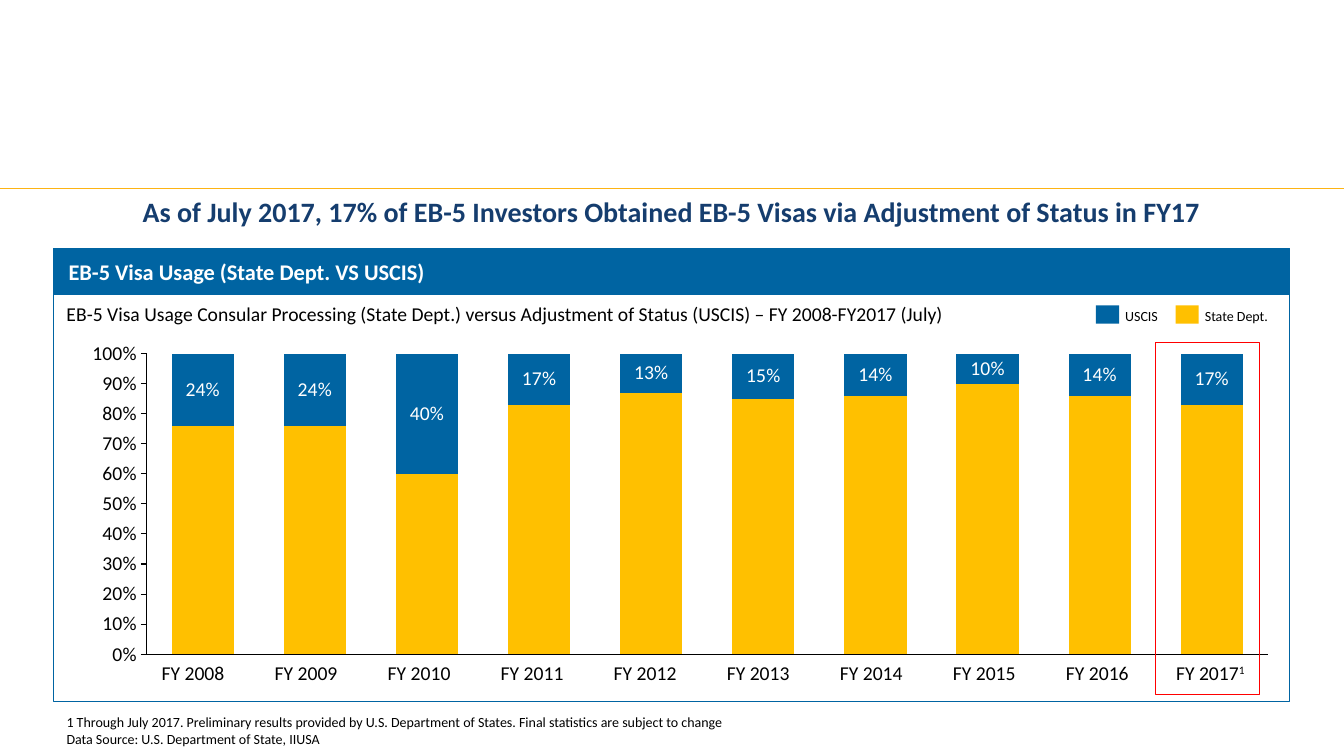
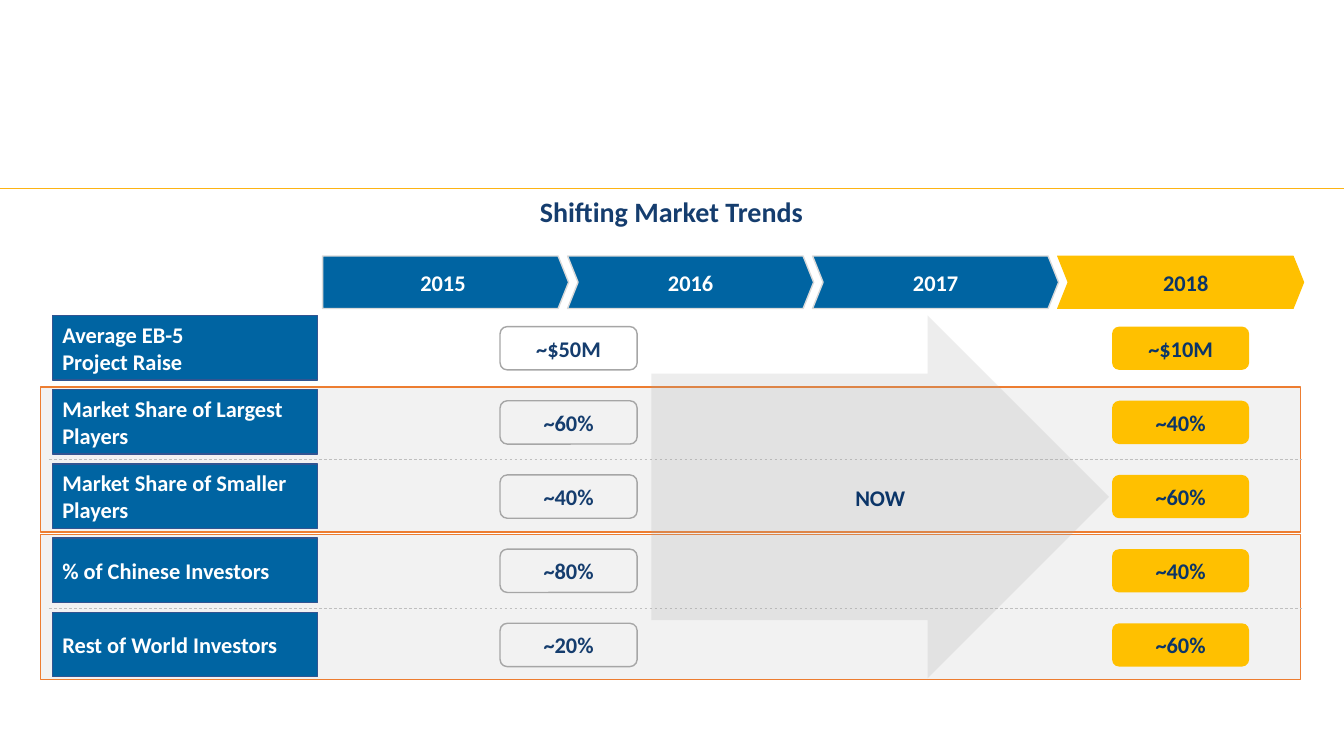
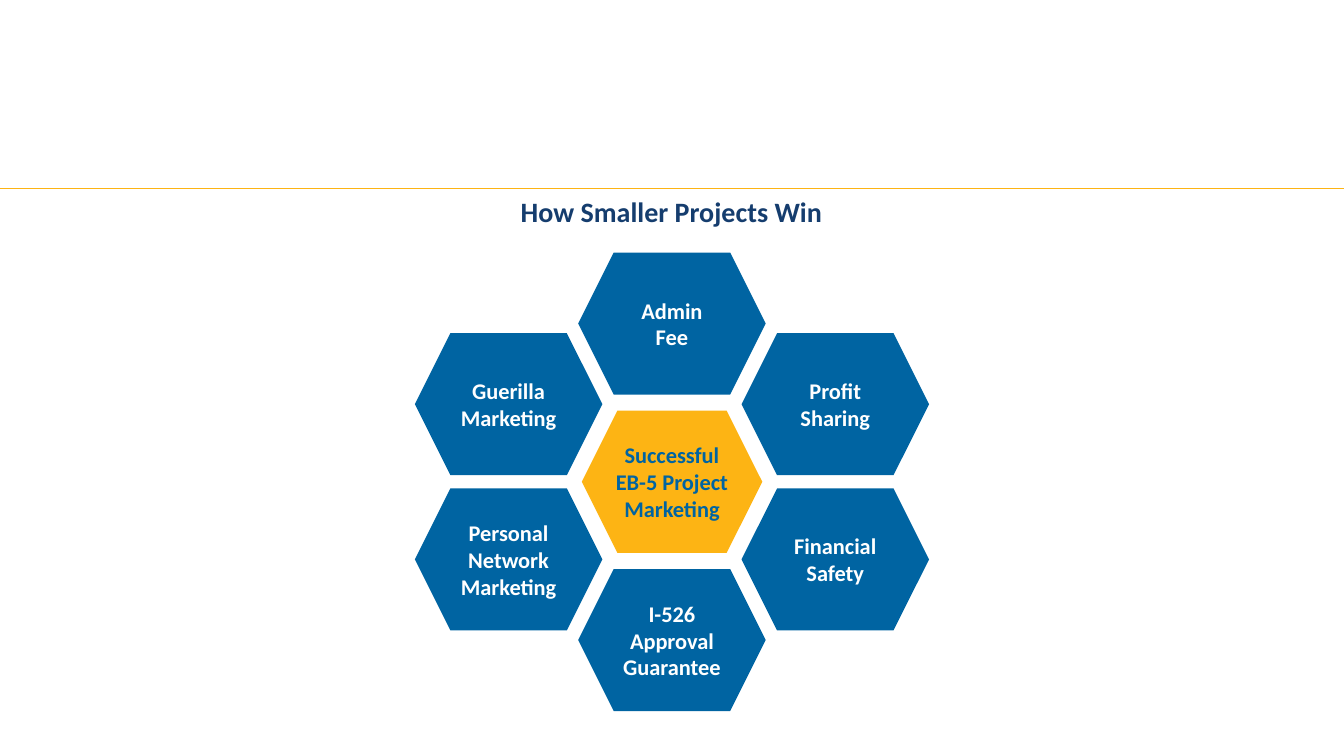
from typing import NamedTuple

from lxml.etree import SubElement as Sub
from pptx import Presentation
from pptx.chart.data import CategoryChartData as Data
from pptx.dml.color import RGBColor as RGB
from pptx.enum.chart import XL_CHART_TYPE as Kind
from pptx.enum.chart import XL_LABEL_POSITION as Spot
from pptx.enum.chart import XL_TICK_LABEL_POSITION as Tag
from pptx.enum.chart import XL_TICK_MARK as Tick
from pptx.enum.dml import MSO_LINE as Dash
from pptx.enum.shapes import MSO_CONNECTOR as Link
from pptx.enum.shapes import MSO_SHAPE as Form
from pptx.enum.text import MSO_ANCHOR as Anchor
from pptx.enum.text import PP_ALIGN as Align
from pptx.oxml import parse_xml
from pptx.oxml.ns import nsdecls, qn
from pptx.util import Inches, Pt

WIDE, HIGH = 13.33, 7.5
FONT = "Calibri"
BLUE = RGB(0x00, 0x64, 0xA2)
NAVY = RGB(0x15, 0x3D, 0x6E)
INK = RGB(0x0B, 0x35, 0x68)
EDGE = RGB(0x32, 0x54, 0x91)
GOLD = RGB(0xFF, 0xC0, 0x00)
AMBER = RGB(0xFD, 0xB4, 0x14)
ORANGE = RGB(0xED, 0x7D, 0x31)
RED = RGB(0xFF, 0x00, 0x00)
WHITE = RGB(0xFF, 0xFF, 0xFF)
BLACK = RGB(0x00, 0x00, 0x00)
PALE = RGB(0xF2, 0xF2, 0xF2)
LIGHT = RGB(0xD9, 0xD9, 0xD9)
SILVER = RGB(0xBF, 0xBF, 0xBF)
GREY = RGB(0xA6, 0xA6, 0xA6)
SHADE = RGB(0xA5, 0xA5, 0xA5)


class Box(NamedTuple):
    x: float
    y: float
    w: float
    h: float

    def cell(self, dx, dy, w, h):
        """Box of size w by h, offset from this box's corner."""
        return Box(self.x + dx, self.y + dy, w, h)

    def row(self, i, step, h):
        return self.cell(0, i * step, self.w, h)

    def emu(self):
        return [Inches(v) for v in self]


def style(font, size, color, bold=False):
    font.name, font.size, font.bold = FONT, Pt(size), bold
    font.color.rgb = color


def write(shape, text, size, color, bold=False, align=Align.LEFT,
          anchor=Anchor.MIDDLE, pad=(0, 0, 0, 0), wrap=True):
    frame = shape.text_frame
    frame.text = text
    frame.word_wrap, frame.vertical_anchor = wrap, anchor
    (frame.margin_left, frame.margin_top,
     frame.margin_right, frame.margin_bottom) = [Inches(v) for v in pad]
    for para in frame.paragraphs:
        para.alignment = align
        for run in para.runs:
            style(run.font, size, color, bold)
    return frame


def label(slide, box, text, size, color=BLACK, **look):
    return write(slide.shapes.add_textbox(*box.emu()), text, size, color, **look)


def draw(slide, form, box, fill=None, line=None, width=1.0, adj=()):
    shape = slide.shapes.add_shape(form, *box.emu())
    shape.shadow.inherit = False
    if fill is None:
        shape.fill.background()
    else:
        shape.fill.solid()
        shape.fill.fore_color.rgb = fill
    if line is None:
        shape.line.fill.background()
    else:
        shape.line.color.rgb, shape.line.width = line, Pt(width)
    for i, value in enumerate(adj):
        shape.adjustments[i] = value
    return shape


def rule(slide, left, right, y, color, dash=None):
    ends = [Inches(v) for v in (left, y, right, y)]
    line = slide.shapes.add_connector(Link.STRAIGHT, *ends)
    line.line.color.rgb, line.line.width = color, Pt(0.5)
    if dash:
        line.line.dash_style = dash
    Sub(line._element.spPr, qn("a:effectLst"))


def start(deck, title):
    """Add a slide with the shared title and gold rule."""
    slide = deck.slides.add_slide(deck.slide_layouts[6])
    frame = label(slide, Box(0.53, 1.97, 12.26, 0.3), title, 20, NAVY,
                  bold=True, align=Align.CENTER, anchor=Anchor.TOP)
    frame.paragraphs[0].line_spacing = 0.9
    rule(slide, 0, WIDE, 1.87, AMBER)
    return slide


# Visa usage

YEARS = [f"FY {year}" for year in range(2008, 2018)]
USCIS = [24, 24, 40, 17, 13, 15, 14, 10, 14, 17]


def plot(slide, box):
    data = Data()
    data.categories = YEARS
    data.add_series("State Dept.", [100 - v for v in USCIS])
    data.add_series("USCIS", USCIS)
    chart = slide.shapes.add_chart(Kind.COLUMN_STACKED, *box.emu(), data).chart
    chart.has_legend = chart.has_title = False
    style(chart.font, 10, BLACK)

    bars = chart.plots[0]
    bars.gap_width, bars.overlap, bars.vary_by_categories = 80, 100, False
    for series, color in zip(bars.series, (GOLD, BLUE)):
        series.format.fill.solid()
        series.format.fill.fore_color.rgb = color
    tags = bars.series[1].data_labels
    tags.show_value, tags.position = True, Spot.CENTER
    tags.number_format, tags.number_format_is_linked = '#,##0"%"', False
    style(tags.font, 14, WHITE)

    cats, vals = chart.category_axis, chart.value_axis
    for axis in (cats, vals):
        axis.has_major_gridlines = False
        axis.major_tick_mark = axis.minor_tick_mark = Tick.NONE
        axis.format.line.color.rgb, axis.format.line.width = BLACK, Pt(0.75)
    cats.tick_label_position = Tag.NONE
    vals.major_tick_mark = Tick.OUTSIDE
    vals.minimum_scale, vals.maximum_scale, vals.major_unit = 0, 100, 10
    vals.tick_labels.number_format = '#,##0"%";"-"#,##0"%"'
    vals.tick_labels.number_format_is_linked = False
    style(vals.tick_labels.font, 14, BLACK)

    area = chart._chartSpace.chart.plotArea
    for old in area.findall(qn("c:layout")):
        area.remove(old)
    places = zip("xywh", (0.064, 0.048, 0.929, 0.904))
    area.insert(0, parse_xml(
        f'<c:layout {nsdecls("c")}><c:manualLayout><c:layoutTarget val="inner"/>'
        '<c:xMode val="edge"/><c:yMode val="edge"/>'
        + "".join(f'<c:{k} val="{v}"/>' for k, v in places)
        + "</c:manualLayout></c:layout>"))


def ticks(slide, box):
    """Year labels, evenly spread from the first to the last column."""
    wide = 0.73
    step = (box.w - wide) / (len(YEARS) - 1)
    for i, year in enumerate(YEARS):
        frame = label(slide, box.cell(i * step, 0, wide, box.h), year, 14,
                      align=Align.CENTER, anchor=Anchor.TOP, wrap=False)
    note = frame.paragraphs[0].add_run()
    note.text = "1"
    style(note.font, 14, BLACK)
    note.font._element.set("baseline", "30000")


def legend(slide, box):
    for i, (name, color) in enumerate((("USCIS", BLUE), ("State Dept.", GOLD))):
        key = box.cell(i * 0.79, 0, 0.23, 0.18)
        draw(slide, Form.RECTANGLE, key, color)
        label(slide, key.cell(0.29, 0, 0.75, 0.2), name, 10, wrap=False)


def usage(slide, box):
    draw(slide, Form.RECTANGLE, box, WHITE, BLUE, 0.75)
    draw(slide, Form.RECTANGLE, box.row(0, 0, 0.45), BLUE, BLUE, 0.75)
    label(slide, box.cell(0.15, 0.09, 11.98, 0.27),
          "EB-5 Visa Usage (State Dept. VS USCIS)", 16, WHITE, bold=True)
    label(slide, box.cell(0.13, 0.53, 9.86, 0.24),
          "EB-5 Visa Usage Consular Processing (State Dept.) versus Adjustment "
          "of Status (USCIS) – FY 2008-FY2017 (July)", 14, anchor=Anchor.TOP)
    legend(slide, box.cell(10.34, 0.56, 1.83, 0.2))
    plot(slide, box.cell(0.16, 0.88, 11.97, 3.3))
    ticks(slide, box.cell(1.02, 4.09, 10.82, 0.27))
    draw(slide, Form.RECTANGLE, box.cell(10.93, 0.93, 1.03, 3.49), None, RED)
    label(slide, box.cell(0.13, 4.6, 12.02, 0.34),
          "1 Through July 2017. Preliminary results provided by U.S. Department "
          "of States. Final statistics are subject to change\n"
          "Data Source: U.S. Department of State, IIUSA", 10, anchor=Anchor.BOTTOM)


# Market trends

TRENDS = [
    ("Average EB-5\nProject Raise", "~$50M", "~$10M"),
    ("Market Share of Largest Players", "~60%", "~40%"),
    ("Market Share of Smaller Players", "~40%", "~60%"),
    ("% of Chinese Investors", "~80%", "~40%"),
    ("Rest of World Investors", "~20%", "~60%"),
]


def groups(slide, box):
    """Two framed bands, each for a pair of rows."""
    for i in range(2):
        draw(slide, Form.RECTANGLE, box.row(i, 1.46, 1.44), PALE, ORANGE)


def years(slide, box):
    step = box.w / 4
    for i in range(4):
        last = i == 3
        shape = draw(slide, Form.CHEVRON if i else Form.PENTAGON,
                     box.cell(i * step, 0, step + 0.01, box.h),
                     GOLD if last else BLUE, GOLD if last else LIGHT,
                     0.75 if last else 1, adj=[0.2])
        write(shape, str(2015 + i), 16, INK if last else WHITE, bold=True,
              align=Align.CENTER, pad=(0.2 if last else 0.1, 0.05, 0.1, 0.05))


def rows(slide, box):
    pitch = box.h / len(TRENDS)
    for i, (name, then, now) in enumerate(TRENDS):
        line = box.row(i, pitch, 0.64)
        head = draw(slide, Form.RECTANGLE, line.cell(0, 0, 2.63, line.h), BLUE, EDGE)
        write(head, name, 16, WHITE, bold=True, pad=(0.1, 0.05, 0.1, 0.05))
        chips = ((then, 4.44, None, GREY, NAVY), (now, 10.51, GOLD, None, INK))
        for text, dx, fill, edge, color in chips:
            chip = draw(slide, Form.ROUNDED_RECTANGLE,
                        line.cell(dx, 0.11, 1.36, 0.43), fill, edge)
            write(chip, text, 16, color, bold=True, align=Align.CENTER)
    for i in (2, 4):
        rule(slide, box.x - 0.03, box.x + box.w, box.y + i * pitch - 0.04,
             SILVER, Dash.DASH)


def arrow(slide, box):
    shape = draw(slide, Form.RIGHT_ARROW, box, SHADE, adj=[0.68, 0.5])
    color = shape._element.spPr.find(qn("a:solidFill"))[0]
    Sub(color, qn("a:alpha")).set("val", "20000")
    label(slide, box.cell(1.92, 1.62, 0.7, 0.37), "NOW", 16, INK, bold=True,
          align=Align.CENTER, wrap=False)


def trends(slide, box):
    groups(slide, box.cell(0, 1.3, 12.5, 2.9))
    years(slide, box.cell(2.8, 0, 9.72, 0.52))
    rows(slide, box.cell(0.12, 0.59, 12.39, 3.68))
    arrow(slide, box.cell(6.06, 0.59, 4.54, 3.6))


# Winning projects

CORE = "Successful\nEB-5 Project\nMarketing"
RING = [
    ("Admin\nFee", 0, -1.57),
    ("Profit\nSharing", 1, -0.77),
    ("Financial\nSafety", 1, 0.77),
    ("I-526\nApproval\nGuarantee", 0, 1.57),
    ("Personal\nNetwork\nMarketing", -1, 0.77),
    ("Guerilla\nMarketing", -1, -0.77),
]


def comb(slide, box):
    """Six hexagons around a core; each has a column and a drop from the centre."""
    high, step = 1.41, 1.62
    tiles = [(CORE, 0, 0, 1.79, AMBER, BLUE)]
    tiles += [(text, col, drop, 1.86, BLUE, WHITE) for text, col, drop in RING]
    for text, col, drop, wide, fill, color in tiles:
        place = box.cell((box.w - wide) / 2 + col * step,
                         (box.h - high) / 2 + drop, wide, high)
        tile = draw(slide, Form.HEXAGON, place, fill, adj=[0.25])
        write(tile, text, 16, color, bold=True, align=Align.CENTER,
              pad=[0.1] * 4, wrap=False)


def main():
    deck = Presentation()
    deck.slide_width, deck.slide_height = Inches(WIDE), Inches(HIGH)
    usage(start(deck, "As of July 2017, 17% of EB-5 Investors Obtained EB-5 "
                      "Visas via Adjustment of Status in FY17"),
          Box(0.53, 2.47, 12.26, 4.49))
    trends(start(deck, "Shifting Market Trends"), Box(0.4, 2.54, 12.53, 4.21))
    comb(start(deck, "How Smaller Projects Win"), Box(4.12, 2.51, 5.09, 4.54))
    deck.save("out.pptx")


if __name__ == "__main__":
    main()
